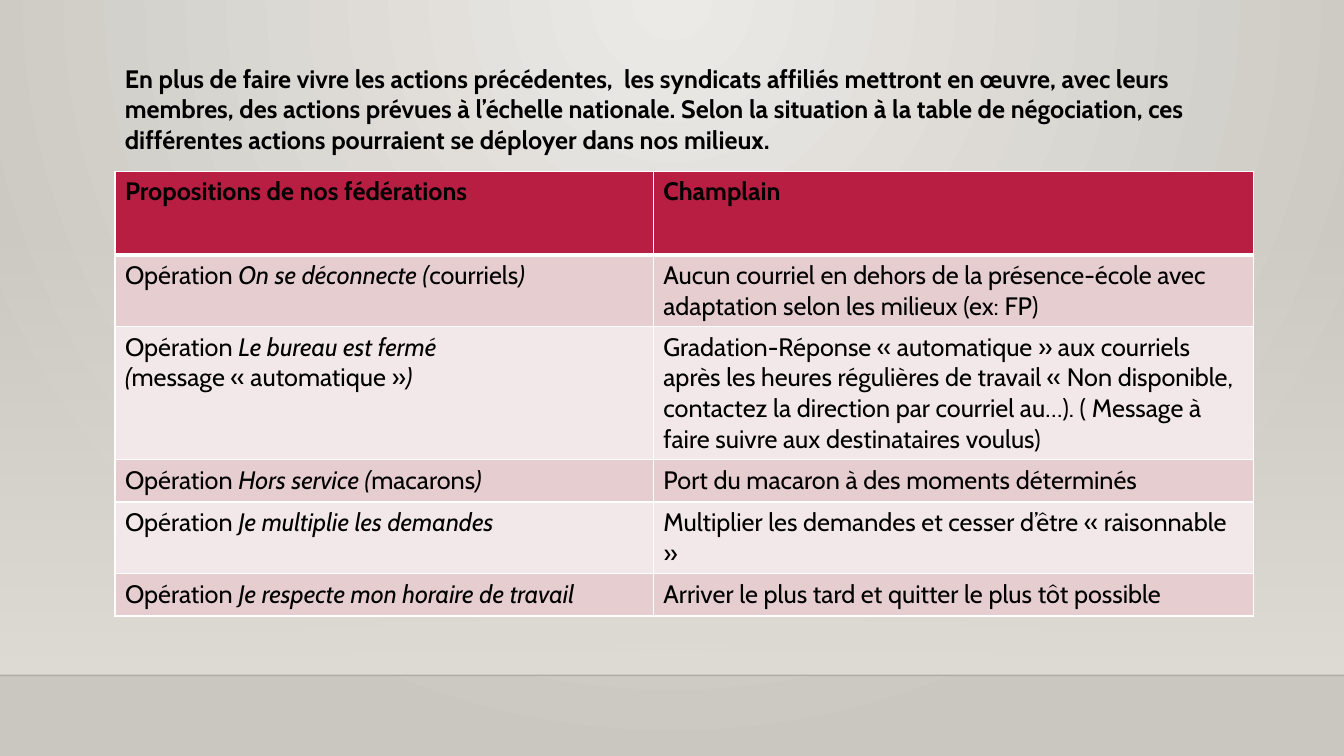
from lxml.etree import SubElement
from pptx import Presentation
from pptx.dml.color import RGBColor
from pptx.enum.shapes import MSO_CONNECTOR, MSO_SHAPE
from pptx.oxml import parse_xml
from pptx.oxml.ns import nsdecls, qn
from pptx.util import Inches, Pt

HUES = {
    "glow": "ECEAE7", "stone": "CAC7C1", "wall": "DFDBD5", "edge": "000001",
    "head": "B71E42", "odd": "E6CDCF", "even": "F3E8E9",
    "rule": "FFFFFF", "ink": "000000",
}
INTRO = (
    "En plus de faire vivre les actions précédentes,  les syndicats affiliés "
    "mettront en œuvre, avec leurs membres, des actions prévues à l’échelle "
    "nationale. Selon la situation à la table de négociation, ces différentes "
    "actions pourraient se déployer dans nos milieux."
)
# Asterisks switch italics on and off; a bar starts a new paragraph.
ROWS = [
    ("Propositions de nos fédérations", "Champlain"),
    ("Opération *On se déconnecte (*courriels*)*",
     "Aucun courriel en dehors de la présence-école avec adaptation selon "
     "les milieux (ex: FP)"),
    ("Opération *Le bureau est fermé*|*(*message « automatique »*)*",
     "Gradation-Réponse « automatique » aux courriels après les heures "
     "régulières de travail « Non disponible, contactez la direction par "
     "courriel au…). ( Message à faire suivre aux destinataires voulus)"),
    ("Opération *Hors service (*macarons*)*",
     "Port du macaron à des moments déterminés"),
    ("Opération* Je multiplie les demandes*",
     "Multiplier les demandes et cesser d’être « raisonnable »"),
    ("Opération* Je respecte mon horaire de travail*",
     "Arriver le plus tard et quitter le plus tôt possible"),
]
COLS = [5.34, 5.95]
LEFT, TOP, HIGH = 1.14, 1.7, 0.42
FLOOR = 6.7


def hue(name):
    return RGBColor.from_string(HUES[name])


def write(frame, text, bold=False):
    """Fill a text frame from text marked with asterisks and bars."""
    for n, part in enumerate(text.split("|")):
        para = frame.add_paragraph() if n else frame.paragraphs[0]
        for k, piece in enumerate(part.split("*")):
            if piece:
                run = para.add_run()
                run.text = piece
                look = {"size": Pt(18), "name": "Cabin", "bold": bold,
                        "italic": k % 2 == 1}
                for key, value in look.items():
                    setattr(run.font, key, value)
                run.font.color.rgb = hue("ink")


deck = Presentation()
deck.slide_width, deck.slide_height = Inches(13.33), Inches(7.5)
slide = deck.slides.add_slide(deck.slide_layouts[6])
shapes = slide.shapes

# Backdrop: a round glow from the top, a wall fading in, and the floor edge
back = slide.background.fill
back.gradient()
wall = shapes.add_shape(MSO_SHAPE.RECTANGLE, 0, Inches(2.21),
                        deck.slide_width, Inches(FLOOR - 2.21))
wall.shadow.inherit = False
wall.line.fill.background()
wall.fill.gradient()
wall.fill.gradient_angle = 270
for fill, names in ((back, ("glow", "stone")), (wall.fill, ("wall", "wall"))):
    for pos, (stop, name) in enumerate(zip(fill.gradient_stops, names)):
        stop.position = pos
        stop.color.rgb = hue(name)
lin = next(slide.element.cSld.iter(qn("a:lin")))
lin.getparent().replace(lin, parse_xml(
    f'<a:path {nsdecls("a")} path="circle"><a:fillToRect l="43000" t="0" '
    'r="43000" b="100000"/></a:path>'))
clear = next(wall.element.iter(qn("a:srgbClr")))
SubElement(clear, qn("a:alpha"), val="0")

edge = shapes.add_connector(MSO_CONNECTOR.STRAIGHT, 0, Inches(FLOOR),
                            deck.slide_width, Inches(FLOOR))
edge.line.width = Pt(1)
edge.line.color.rgb = hue("edge")
SubElement(next(edge.element.iter(qn("a:srgbClr"))), qn("a:alpha"), val="20000")
SubElement(edge.element.spPr, qn("a:effectLst"))

# Table of actions
frame = shapes.add_table(len(ROWS), len(COLS), Inches(LEFT), Inches(TOP),
                         Inches(sum(COLS)), Inches(HIGH * (len(ROWS) + 1)))
table = frame.table
for col, wide in zip(table.columns, COLS):
    col.width = Inches(wide)
for r, texts in enumerate(ROWS):
    table.rows[r].height = Inches(HIGH if r else 0.83)
    tone = "head" if r == 0 else "odd" if r % 2 else "even"
    for c, text in enumerate(texts):
        cell = table.cell(r, c)
        write(cell.text_frame, text, bold=r == 0)
        cell.fill.solid()
        cell.fill.fore_color.rgb = hue(tone)
        for n, side in enumerate("LRTB"):
            thick = 3 if (r, side) in ((0, "B"), (1, "T")) else 1
            cell._tc.tcPr.insert(n, parse_xml(
                f'<a:ln{side} {nsdecls("a")} w="{Pt(thick)}"><a:solidFill>'
                f'<a:srgbClr val="{HUES["rule"]}"/></a:solidFill></a:ln{side}>'))

# Introduction
intro = shapes.add_textbox(Inches(LEFT), Inches(0.58),
                           Inches(sum(COLS)), Inches(1.01))
intro.text_frame.word_wrap = True
write(intro.text_frame, INTRO, bold=True)

deck.save("out.pptx")
